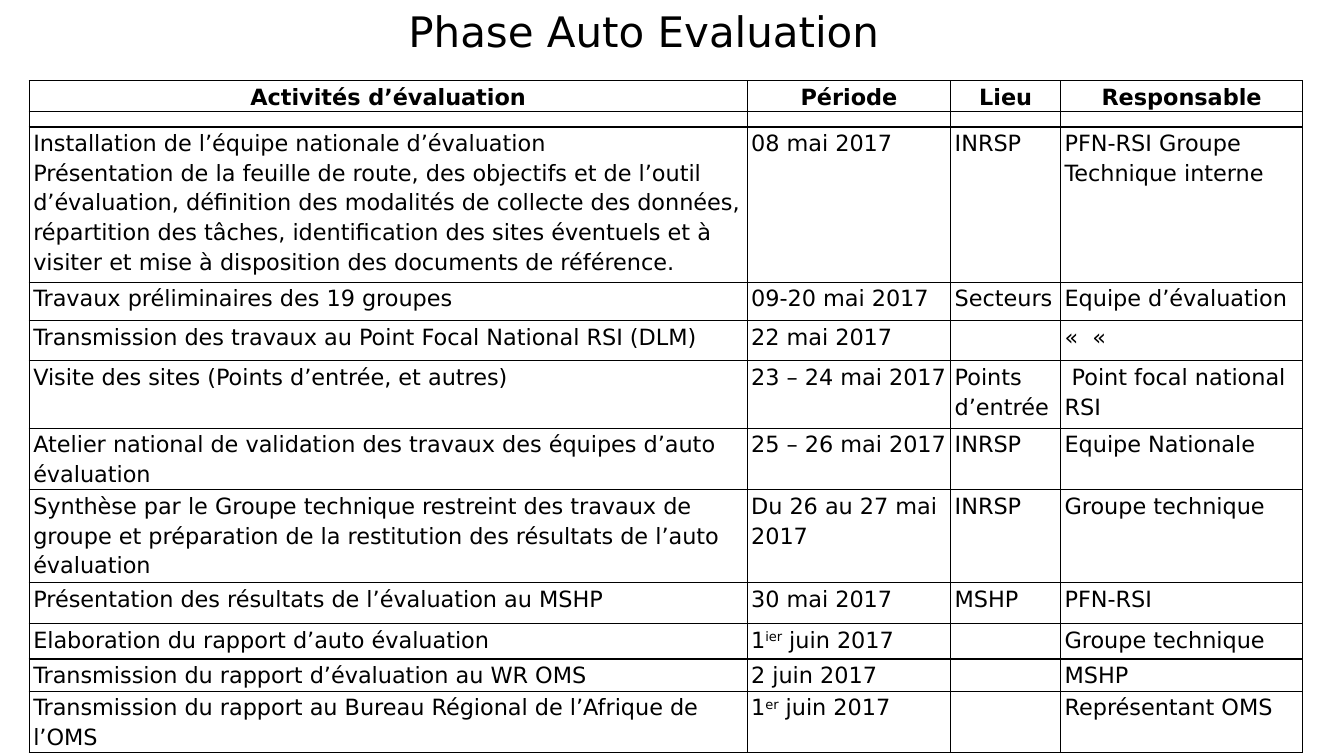
from lxml import etree
from pptx import Presentation
from pptx import util as u
from pptx.dml.color import RGBColor
from pptx.enum import text
from pptx.oxml.ns import qn

PX = 9144  # EMU, 100 px to the inch
FONT = "DejaVu Sans"
COLORS = {"ink": "000000", "border": "000000"}

COLUMN_WIDTHS = [712, 202, 109, 240]
ROW_HEIGHTS = [31, 15, 154, 38, 40, 67, 61, 92, 41, 35, 32, 61]

# Lines of a cell are split by \n; text between two ^ is superscript.
SCHEDULE = [
    ("Activités d’évaluation", "Période", "Lieu", "Responsable"),
    ("", "", "", ""),
    ("Installation de l’équipe nationale d’évaluation\n"
     "Présentation de la feuille de route, des objectifs et de l’outil "
     "d’évaluation, définition des modalités de collecte des données, "
     "répartition des tâches, identification des sites éventuels et à "
     "visiter et mise à disposition des documents de référence.",
     "08 mai 2017", "INRSP", "PFN-RSI Groupe Technique interne"),
    ("Travaux préliminaires des 19 groupes",
     "09-20 mai 2017", "Secteurs", "Equipe d’évaluation"),
    ("Transmission des travaux au Point Focal National RSI (DLM)",
     "22 mai 2017", "", "«  «"),
    ("Visite des sites (Points d’entrée, et autres)",
     "23 – 24 mai 2017", "Points d’entrée", " Point focal national RSI"),
    ("Atelier national de validation des travaux des équipes d’auto évaluation",
     "25 – 26 mai 2017", "INRSP", "Equipe Nationale"),
    ("Synthèse par le Groupe technique restreint des travaux de groupe et "
     "préparation de la restitution des résultats de l’auto évaluation",
     "Du 26 au 27 mai 2017", "INRSP", "Groupe technique"),
    ("Présentation des résultats de l’évaluation au MSHP",
     "30 mai 2017", "MSHP", "PFN-RSI"),
    ("Elaboration du rapport d’auto évaluation",
     "1^ier^ juin 2017", "", "Groupe technique"),
    ("Transmission du rapport d’évaluation au WR OMS",
     "2 juin 2017", "", "MSHP"),
    ("Transmission du rapport au Bureau Régional de l’Afrique de l’OMS",
     "1^er^ juin 2017", "", "Représentant OMS"),
]


def px(length):
    return u.Emu(length * PX)


def add_span(para, words, size, bold=False):
    span = para.add_run()
    span.text = words
    span.font.name = FONT
    span.font.size = u.Pt(size)
    span.font.bold = bold
    span.font.color.rgb = RGBColor.from_string(COLORS["ink"])
    return span


def add_title(page, words):
    title = page.shapes.title
    title.left, title.top, title.width, title.height = map(px, (395, 0, 491, 61))
    frame = title.text_frame
    frame.word_wrap = False
    frame.auto_size = text.MSO_AUTO_SIZE.NONE
    frame.vertical_anchor = text.MSO_ANCHOR.TOP
    para = frame.paragraphs[0]
    para.alignment = text.PP_ALIGN.LEFT
    add_span(para, words, 30)


def set_borders(cell):
    properties = cell._tc.get_or_add_tcPr()
    for side in ("a:lnL", "a:lnR", "a:lnT", "a:lnB"):
        line = etree.SubElement(properties, qn(side), w=str(u.Pt(1)))
        fill = etree.SubElement(line, qn("a:solidFill"))
        etree.SubElement(fill, qn("a:srgbClr"), val=COLORS["border"])


def fill_cell(cell, content, is_header):
    set_borders(cell)
    cell.fill.background()
    cell.margin_left = cell.margin_right = px(4)
    cell.margin_top = cell.margin_bottom = 0
    frame = cell.text_frame
    for index, line in enumerate(content.split("\n")):
        para = frame.add_paragraph() if index else frame.paragraphs[0]
        para.line_spacing = 1.15
        para.alignment = text.PP_ALIGN.CENTER if is_header else text.PP_ALIGN.LEFT
        if not line:  # a small end mark keeps the empty row thin
            etree.SubElement(para._p, qn("a:endParaRPr"), sz="800")
            continue
        for part, words in enumerate(line.split("^")):
            span = add_span(para, words, 16, is_header)
            if part % 2:
                span.font._element.set("baseline", "30000")


def add_schedule(page):
    frame = page.shapes.add_table(
        len(SCHEDULE), len(COLUMN_WIDTHS), px(29), px(80),
        px(sum(COLUMN_WIDTHS)), px(sum(ROW_HEIGHTS)))
    table = frame.table
    table.first_row = table.horz_banding = False
    for column, width in zip(table.columns, COLUMN_WIDTHS):
        column.width = px(width)
    for index, (row, height) in enumerate(zip(table.rows, ROW_HEIGHTS)):
        row.height = px(height)
        for cell, content in zip(row.cells, SCHEDULE[index]):
            fill_cell(cell, content, is_header=index == 0)


def main():
    deck = Presentation()
    deck.slide_width, deck.slide_height = px(1333), px(750)
    page = deck.slides.add_slide(deck.slide_layouts[5])
    add_schedule(page)
    add_title(page, "Phase Auto Evaluation")
    deck.save("out.pptx")


if __name__ == "__main__":
    main()
